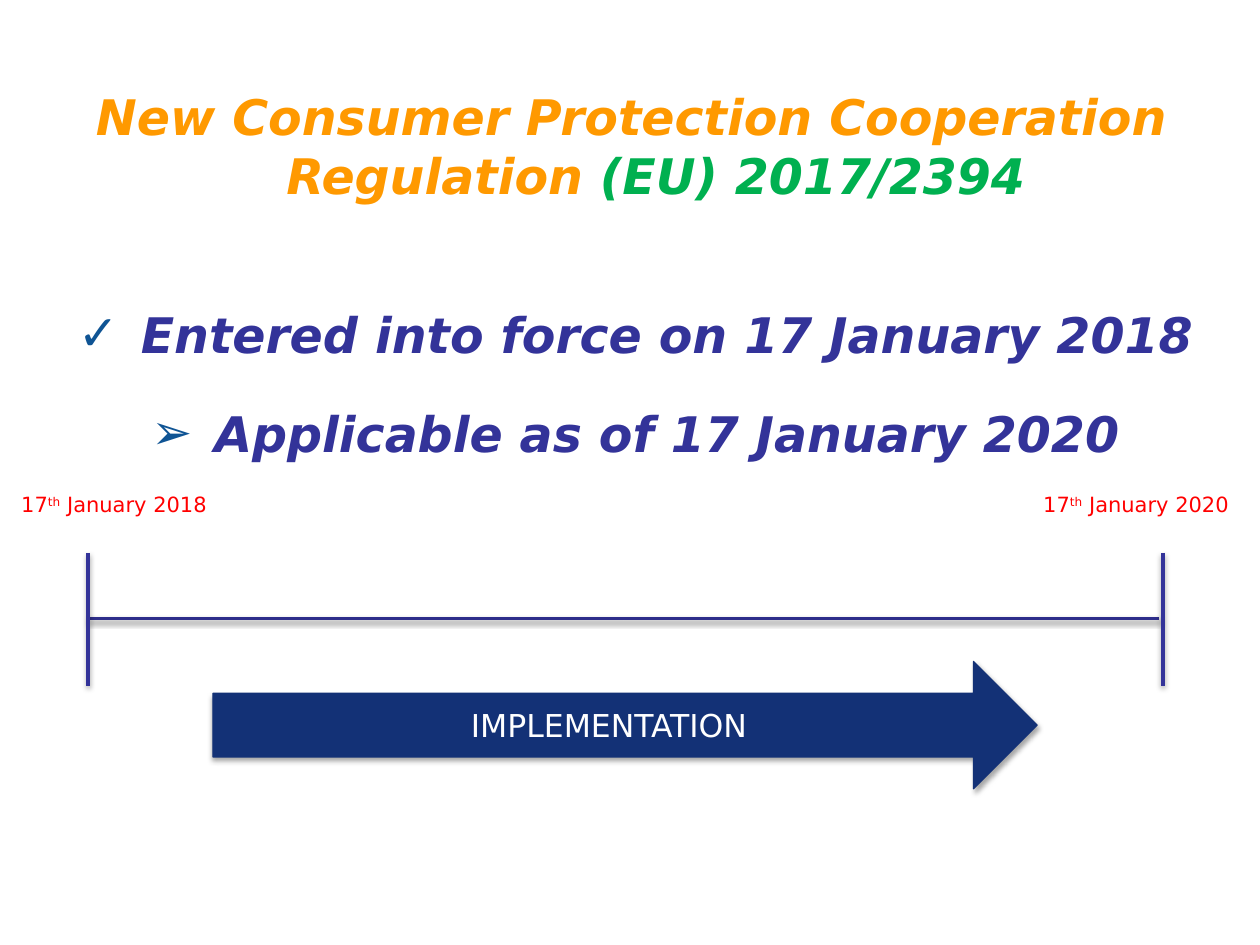
from lxml.etree import SubElement
from pptx import Presentation
from pptx.dml.color import RGBColor
from pptx.enum.shapes import MSO_CONNECTOR, MSO_SHAPE
from pptx.enum.text import MSO_ANCHOR, PP_ALIGN
from pptx.oxml import parse_xml
from pptx.oxml.ns import nsdecls, qn
from pptx.util import Pt

FONT = "DejaVu Sans"
ORANGE = RGBColor(0xFF, 0x99, 0x00)
GREEN = RGBColor(0x00, 0xB0, 0x50)
INDIGO = RGBColor(0x33, 0x33, 0x99)
DARK_INDIGO = RGBColor(0x2D, 0x2D, 0x8A)
NAVY = RGBColor(0x13, 0x31, 0x76)
RED = RGBColor(0xFF, 0x00, 0x00)
WHITE = RGBColor(0xFF, 0xFF, 0xFF)
BULLET_BLUE = RGBColor(0x0F, 0x54, 0x94)


def add_run(paragraph, text, size, color, emphasis=False):
    run = paragraph.add_run()
    run.text = text
    run.font.name = FONT
    run.font.size = Pt(size)
    run.font.color.rgb = color
    run.font.bold = run.font.italic = emphasis
    return run


def add_shadow(shape, distance, opacity):
    shape._element.spPr.append(parse_xml(
        f'<a:effectLst {nsdecls("a")}><a:outerShdw blurRad="{Pt(3.1)}" dist="{Pt(distance)}" '
        f'dir="5400000" rotWithShape="0"><a:srgbClr val="000000"><a:alpha val="{opacity * 1000}"/>'
        '</a:srgbClr></a:outerShdw></a:effectLst>'))


presentation = Presentation()
presentation.slide_width = Pt(720)
presentation.slide_height = Pt(540)
slide = presentation.slides.add_slide(presentation.slide_layouts[6])

title = slide.shapes.add_textbox(Pt(36.7), Pt(46.5), Pt(648), Pt(73.5))
title.text_frame.word_wrap = True
title.text_frame.vertical_anchor = MSO_ANCHOR.MIDDLE
paragraph = title.text_frame.paragraphs[0]
paragraph.alignment = PP_ALIGN.CENTER
properties = paragraph._p.get_or_add_pPr()
properties.set("marL", str(Pt(28)))
properties.set("indent", str(Pt(-28)))
add_run(paragraph, "New Consumer Protection Cooperation Regulation ", 28, ORANGE, True)
add_run(paragraph, "(EU) 2017/2394", 28, GREEN, True)

body = slide.shapes.add_textbox(Pt(18), Pt(153.4), Pt(686), Pt(108))
body.text_frame.word_wrap = True
milestones = [("✓", "Entered into force on 17 January 2018"),
              ("➢", "Applicable as of 17 January 2020")]
for index, (bullet, text) in enumerate(milestones):
    paragraph = body.text_frame.add_paragraph() if index else body.text_frame.paragraphs[0]
    paragraph.alignment = PP_ALIGN.CENTER
    paragraph.line_spacing = 1.5
    if index:
        paragraph.space_before = Pt(6.5)
    properties = paragraph._p.get_or_add_pPr()
    properties.set("marL", str(Pt(40)))
    properties.set("indent", str(Pt(-36)))
    bullet_color = SubElement(properties, qn("a:buClr"))
    SubElement(bullet_color, qn("a:srgbClr"), val=str(BULLET_BLUE))
    SubElement(properties, qn("a:buFont"), typeface=FONT)
    SubElement(properties, qn("a:buChar"), char=bullet)
    add_run(paragraph, text, 28, INDIGO, True)

arrow = slide.shapes.add_shape(MSO_SHAPE.RIGHT_ARROW, Pt(121.7), Pt(378), Pt(471), Pt(72.7))
arrow.fill.solid()
arrow.fill.fore_color.rgb = NAVY
arrow.line.color.rgb = NAVY
arrow.line.width = Pt(0.75)
add_shadow(arrow, 1.8, 35)
arrow.text_frame.vertical_anchor = MSO_ANCHOR.MIDDLE
paragraph = arrow.text_frame.paragraphs[0]
paragraph.alignment = PP_ALIGN.CENTER
add_run(paragraph, "IMPLEMENTATION", 18, WHITE)

for left, year in [(584, 2020), (0, 2018)]:
    label = slide.shapes.add_textbox(Pt(left), Pt(271.5), Pt(130.3), Pt(33))
    label.text_frame.word_wrap = True
    label.text_frame.vertical_anchor = MSO_ANCHOR.MIDDLE
    paragraph = label.text_frame.paragraphs[0]
    paragraph.alignment = PP_ALIGN.CENTER
    add_run(paragraph, "17", 12, RED)
    ordinal = add_run(paragraph, "th", 12, RED)
    ordinal.font._element.set("baseline", "30000")
    add_run(paragraph, f" January {year}", 12, RED)

timeline = [(50.4, 353.5, 662.4, 353.5, DARK_INDIGO),
            (664.5, 316, 664.5, 392, INDIGO),
            (50.4, 316, 50.4, 392, INDIGO)]
for start_x, start_y, end_x, end_y, color in timeline:
    line = slide.shapes.add_connector(
        MSO_CONNECTOR.STRAIGHT, Pt(start_x), Pt(start_y), Pt(end_x), Pt(end_y))
    line.line.color.rgb = color
    line.line.width = Pt(2)
    add_shadow(line, 1.6, 38)

presentation.save("out.pptx")
